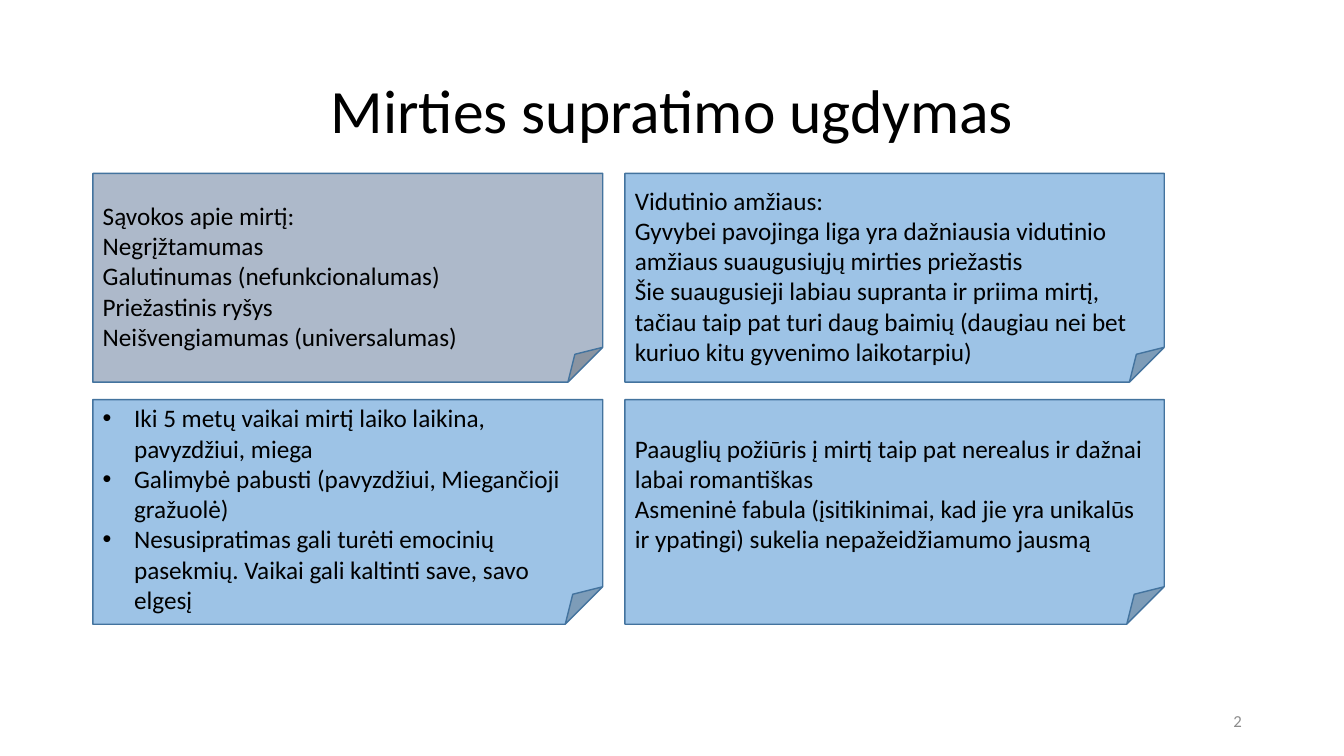
from lxml import etree
from pptx import Presentation
from pptx import util as u
from pptx.dml.color import RGBColor
from pptx.enum import shapes, text
from pptx.oxml.ns import qn

FONT = "Calibri"
BLACK, GREY = "000000", "8C8C8C"
BLUE, GREY_BLUE, OUTLINE = "9DC3E6", "ADB9CA", "43739E"
BODY_SIZE = 18
BULLET_INDENT = u.Cm(0.79)

# Card grid, in centimetres
LEFT, TOP = 2.34, 4.37
COLUMN_WIDTHS, COLUMN_GAP = (12.85, 13.59), 0.56
ROW_HEIGHTS, ROW_GAP = (5.26, 5.66), 0.44

# Each card: fill, bulleted, top inset in centimetres, paragraphs
CARDS = [
    [
        (GREY_BLUE, False, 0.9, [
            "Sąvokos apie mirtį:",
            "Negrįžtamumas",
            "Galutinumas (nefunkcionalumas)",
            "Priežastinis ryšys",
            "Neišvengiamumas (universalumas)",
        ]),
        (BLUE, False, 0.9, [
            "Vidutinio amžiaus:",
            "Gyvybei pavojinga liga yra dažniausia vidutinio amžiaus "
            "suaugusiųjų mirties priežastis",
            "Šie suaugusieji labiau supranta ir priima mirtį, tačiau taip pat "
            "turi daug baimių (daugiau nei bet kuriuo kitu gyvenimo laikotarpiu)",
        ]),
    ],
    [
        (BLUE, True, 0.9, [
            "Iki 5 metų vaikai mirtį laiko laikina, pavyzdžiui, miega",
            "Galimybė pabusti (pavyzdžiui, Miegančioji gražuolė)",
            "Nesusipratimas gali turėti emocinių pasekmių. "
            "Vaikai gali kaltinti save, savo elgesį",
        ]),
        (BLUE, False, 0.13, [
            "Paauglių požiūris į mirtį taip pat nerealus ir dažnai labai romantiškas",
            "Asmeninė fabula (įsitikinimai, kad jie yra unikalūs ir ypatingi) "
            "sukelia nepažeidžiamumo jausmą",
        ]),
    ],
]


def color(value):
    return RGBColor.from_string(value)


def apply(target, values):
    for name, value in values.items():
        setattr(target, name, value)


def place(shape, box):
    names = ("left", "top", "width", "height")
    apply(shape, {name: u.Cm(length) for name, length in zip(names, box)})


def write(shape, lines, size, font_color, alignment, top_inset=0.13, line_spacing=1.0):
    frame = shape.text_frame
    apply(frame, {
        "text": "\n".join(lines),
        "word_wrap": True,
        "auto_size": text.MSO_AUTO_SIZE.NONE,
        "vertical_anchor": text.MSO_ANCHOR.MIDDLE,
        "margin_top": u.Cm(top_inset),
    })
    for paragraph in frame.paragraphs:
        apply(paragraph, {"alignment": alignment, "line_spacing": line_spacing})
        for run in paragraph.runs:
            apply(run.font, {"name": FONT, "size": u.Pt(size)})
            run.font.color.rgb = color(font_color)


def add_bullet(paragraph):
    properties = paragraph._p.get_or_add_pPr()
    properties.set("marL", str(BULLET_INDENT))
    properties.set("indent", str(-BULLET_INDENT))
    etree.SubElement(properties, qn("a:buFont"), typeface="Arial")
    etree.SubElement(properties, qn("a:buChar"), char="•")


def add_title(slide, box):
    title = slide.shapes.title
    place(title, box)
    write(title, ["Mirties supratimo ugdymas"], 44, BLACK,
          text.PP_ALIGN.CENTER, line_spacing=0.9)


def add_card(slide, box, fill, bulleted, top_inset, lines):
    card = slide.shapes.add_shape(
        shapes.MSO_SHAPE.FOLDED_CORNER, *(u.Cm(length) for length in box))
    card.shadow.inherit = False
    card.fill.solid()
    card.fill.fore_color.rgb = color(fill)
    card.line.color.rgb = color(OUTLINE)
    card.line.width = u.Pt(1)
    write(card, lines, BODY_SIZE, BLACK, text.PP_ALIGN.LEFT, top_inset)
    if bulleted:
        for paragraph in card.text_frame.paragraphs:
            add_bullet(paragraph)


def add_card_grid(slide, left, top):
    row_top = top
    for row, height in zip(CARDS, ROW_HEIGHTS):
        card_left = left
        for card, width in zip(row, COLUMN_WIDTHS):
            add_card(slide, (card_left, row_top, width, height), *card)
            card_left += width + COLUMN_GAP
        row_top += height + ROW_GAP


def add_page_number(slide, box):
    number = slide.shapes.add_textbox(*(u.Cm(length) for length in box))
    write(number, ["2"], 12, GREY, text.PP_ALIGN.RIGHT)


def main():
    presentation = Presentation()
    apply(presentation, {"slide_width": u.Cm(33.87), "slide_height": u.Cm(19.05)})
    title_only = presentation.slide_layouts[5]
    slide = presentation.slides.add_slide(title_only)

    # Heading
    add_title(slide, (LEFT, 1.02, 29.21, 3.68))
    # Four folded cards
    add_card_grid(slide, LEFT, TOP)
    # Footer
    add_page_number(slide, (23.93, 17.65, 7.62, 1.02))

    presentation.save("out.pptx")


if __name__ == "__main__":
    main()
